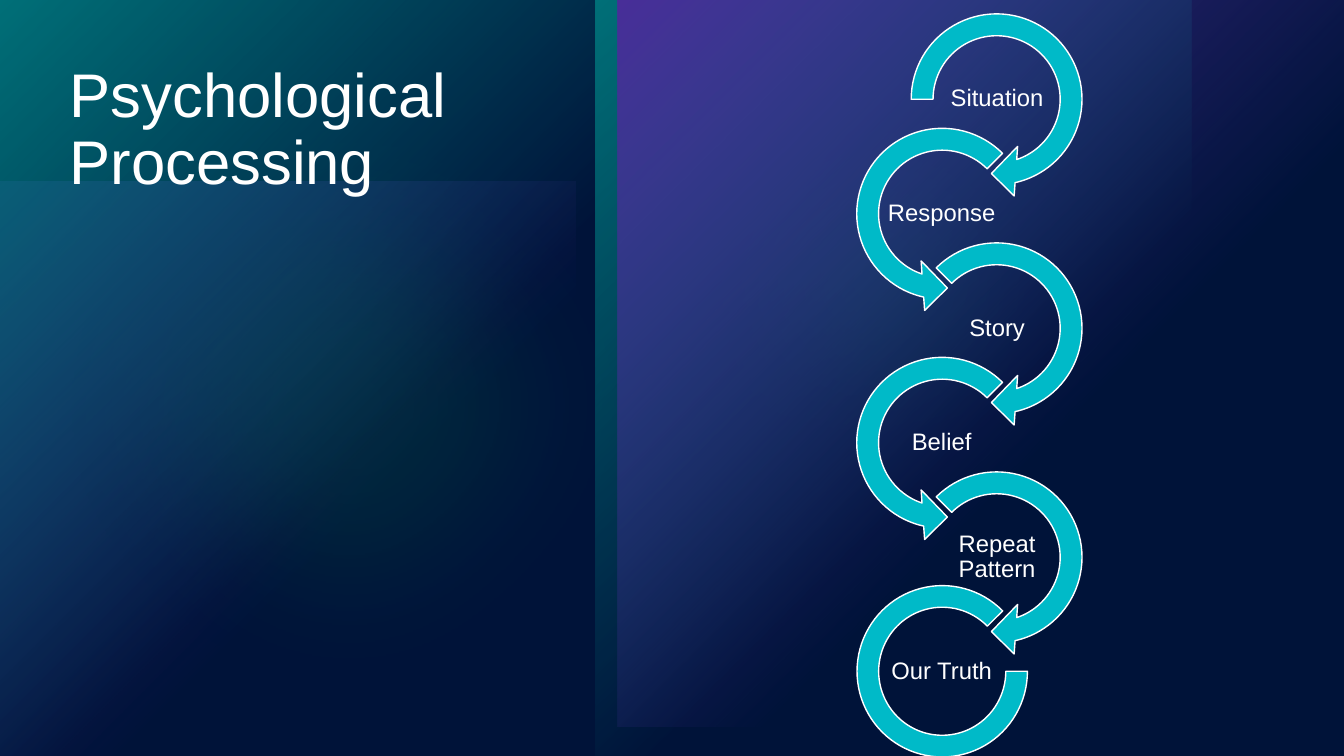
"""Build the Psychological Processing slide with its chain of circular arrows."""
from dataclasses import dataclass

from lxml import etree
from pptx import Presentation
from pptx.dml.color import RGBColor
from pptx.enum.shapes import MSO_SHAPE
from pptx.enum.text import MSO_ANCHOR, MSO_AUTO_SIZE, PP_ALIGN
from pptx.oxml.ns import qn
from pptx.util import Inches, Pt

RECT, OVAL = MSO_SHAPE.RECTANGLE, MSO_SHAPE.OVAL
RIGHT, LEFT = MSO_SHAPE.CIRCULAR_ARROW, MSO_SHAPE.LEFT_CIRCULAR_ARROW
ARC = MSO_SHAPE.BLOCK_ARC
TOP, MIDDLE = MSO_ANCHOR.TOP, MSO_ANCHOR.MIDDLE
ALIGN_LEFT, ALIGN_CENTER = PP_ALIGN.LEFT, PP_ALIGN.CENTER
NO_FIT = MSO_AUTO_SIZE.NONE
TITLE_ONLY = 5


@dataclass(frozen=True)
class Theme:
    font: str = "Arial"
    navy: str = "002060"
    teal: str = "00BAC8"
    purple: str = "794DFF"
    green: str = "00D17D"
    black: str = "000000"
    white: str = "FFFFFF"
    title: int = 44
    label: int = 17


T = Theme()
TITLE = "Psychological Processing"
BACKDROP = [
    (RECT, (0, 1.8, 5.71, 5.71), T.purple, 60, "glow"),
    (OVAL, (6.29, 0.43, 4.72, 4.72), T.green, 60, "soft"),
    (OVAL, (0, 0.56, 6.94, 6.94), T.green, 20, "soft"),
    (RECT, (0, 0, 5.91, 7.5), T.teal, 100, "glow"),
    (RECT, (5.91, 0, 5.91, 7.5), T.teal, 100, "glow"),
    (RECT, (6.13, 0, 7.21, 7.21), T.purple, 100, "glow"),
    (RECT, (0, 0, 13.33, 7.5), T.black, 40, "flat"),
]
HEAD = (0.11, 11.42)
STEPS = [
    ("Situation", RIGHT, (*HEAD, 45, 108, 0.125)),
    ("Response", LEFT, (*HEAD, 63, 189, 0.125)),
    ("Story", RIGHT, (*HEAD, 45, 135, 0.125)),
    ("Belief", LEFT, (*HEAD, 63, 189, 0.125)),
    ("Repeat Pattern", RIGHT, (*HEAD, 45, 135, 0.125)),
    ("Our Truth", ARC, (0, 189, 0.127)),
]
PITCH = 5.68 / 5
RING, ARC_W, ARC_H = 1.97, 1.69, 1.7
RING_X = (8.9, 8.36)
LABEL_X = (9.34, 8.79)
LABEL_Y, LABEL_W, LABEL_H = 0.71, 1.1, 0.55
SOFT_EDGE = Inches(1.39)


def inches(box):
    return [Inches(v) for v in box]


def add_shape(s, kind, box):
    sp = s.shapes.add_shape(kind, *inches(box))
    sp.shadow.inherit = False
    return sp


def add_color(parent, color, opacity):
    clr = etree.SubElement(parent, qn("a:srgbClr"), val=color)
    etree.SubElement(clr, qn("a:alpha"), val=str(opacity * 1000))


def add_backdrop(s, kind, box, color, opacity, style):
    sp = add_shape(s, kind, box)
    sp.line.fill.background()
    sp.fill.background()
    props = sp.element.spPr
    if style == "glow":
        fill = etree.Element(qn("a:gradFill"), rotWithShape="1")
        stops = etree.SubElement(fill, qn("a:gsLst"))
        for pos, alpha in ((0, opacity), (60, 0)):
            stop = etree.SubElement(stops, qn("a:gs"), pos=str(pos * 1000))
            add_color(stop, color, alpha)
        focus = etree.SubElement(fill, qn("a:path"), path="circle")
        etree.SubElement(focus, qn("a:fillToRect"), r="100000", b="100000")
    else:
        fill = etree.Element(qn("a:solidFill"))
        add_color(fill, color, opacity)
    props.replace(props.find(qn("a:noFill")), fill)
    if style == "soft":
        effects = props.find(qn("a:effectLst"))
        etree.SubElement(effects, qn("a:softEdge"), rad=str(SOFT_EDGE))


def write(sp, text, *, size, align, anchor, margins):
    tf = sp.text_frame
    tf.word_wrap = True
    tf.auto_size = NO_FIT
    tf.vertical_anchor = anchor
    tf.margin_left, tf.margin_top, tf.margin_right, tf.margin_bottom = inches(margins)
    p = tf.paragraphs[0]
    p.alignment = align
    p.line_spacing = 0.9
    p.space_before = Pt(0)
    r = p.add_run()
    r.text = text
    r.font.name = T.font
    r.font.size = Pt(size)
    r.font.color.rgb = RGBColor.from_string(T.white)


def add_step(s, i, text, kind, adjustments):
    side, y = i % 2, i * PITCH
    box = (RING_X[side], y, RING, RING)
    if kind == ARC:
        box = (RING_X[side] + (RING - ARC_W) / 2, y + 0.13, ARC_W, ARC_H)
    sp = add_shape(s, kind, box)
    for n, value in enumerate(adjustments):
        sp.adjustments[n] = value
    sp.fill.solid()
    sp.fill.fore_color.rgb = RGBColor.from_string(T.teal)
    sp.line.color.rgb = RGBColor.from_string(T.white)
    sp.line.width = Pt(1)
    label = s.shapes.add_textbox(
        *inches((LABEL_X[side], LABEL_Y + y, LABEL_W, LABEL_H)))
    write(label, text, size=T.label, align=ALIGN_CENTER, anchor=MIDDLE,
          margins=(0.01,) * 4)


def main():
    prs = Presentation()
    prs.slide_width, prs.slide_height = inches((13.33, 7.5))
    s = prs.slides.add_slide(prs.slide_layouts[TITLE_ONLY])
    s.background.fill.solid()
    s.background.fill.fore_color.rgb = RGBColor.from_string(T.navy)
    for part in BACKDROP:
        add_backdrop(s, *part)
    title = s.shapes.title
    title.element.getparent().append(title.element)
    title.left, title.top, title.width, title.height = inches((0.59, 0.59, 6.83, 5.25))
    write(title, TITLE, size=T.title, align=ALIGN_LEFT, anchor=TOP,
          margins=(0.1, 0.05, 0.1, 0.05))
    for i, step in enumerate(STEPS):
        add_step(s, i, *step)
    prs.save("out.pptx")


if __name__ == "__main__":
    main()
